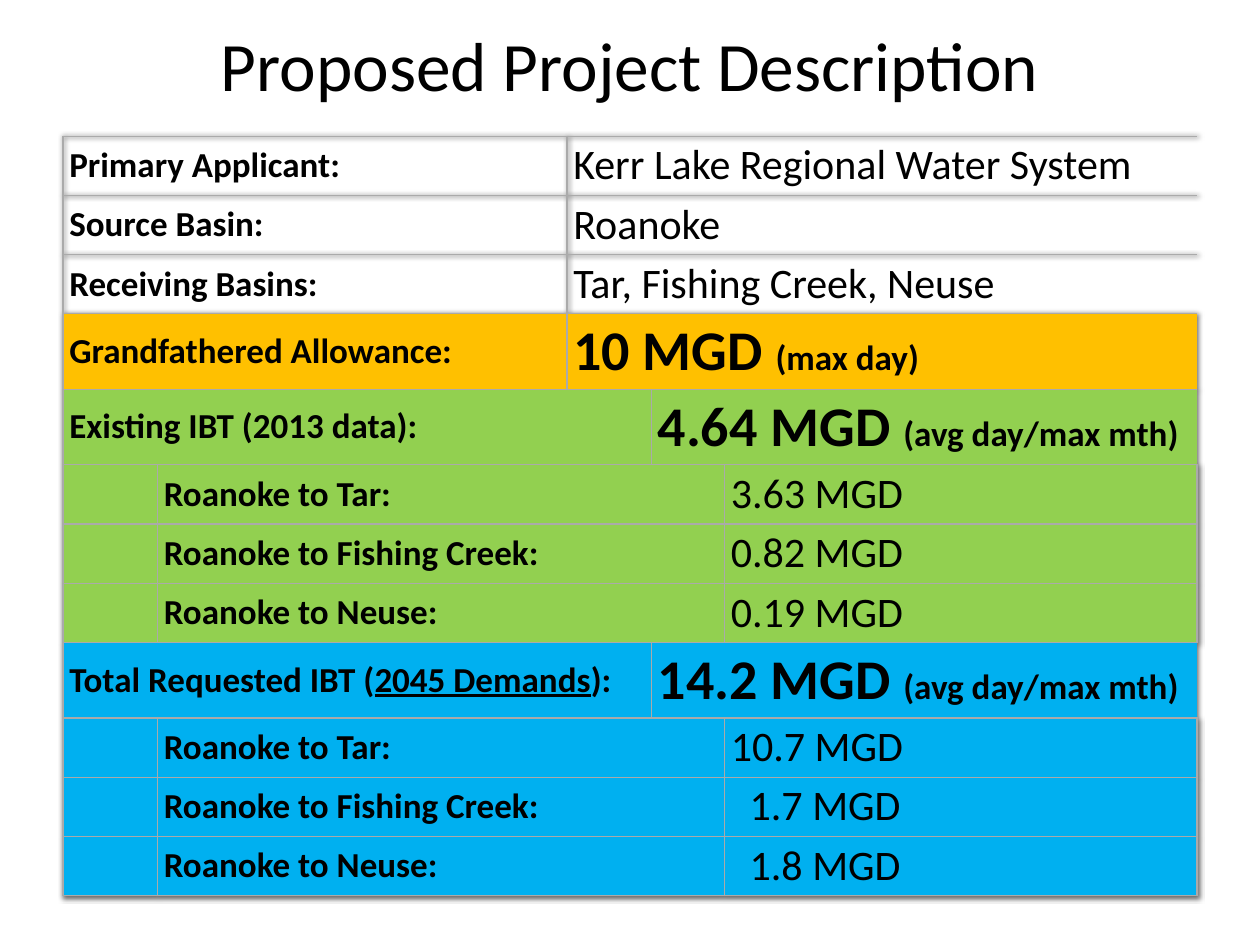
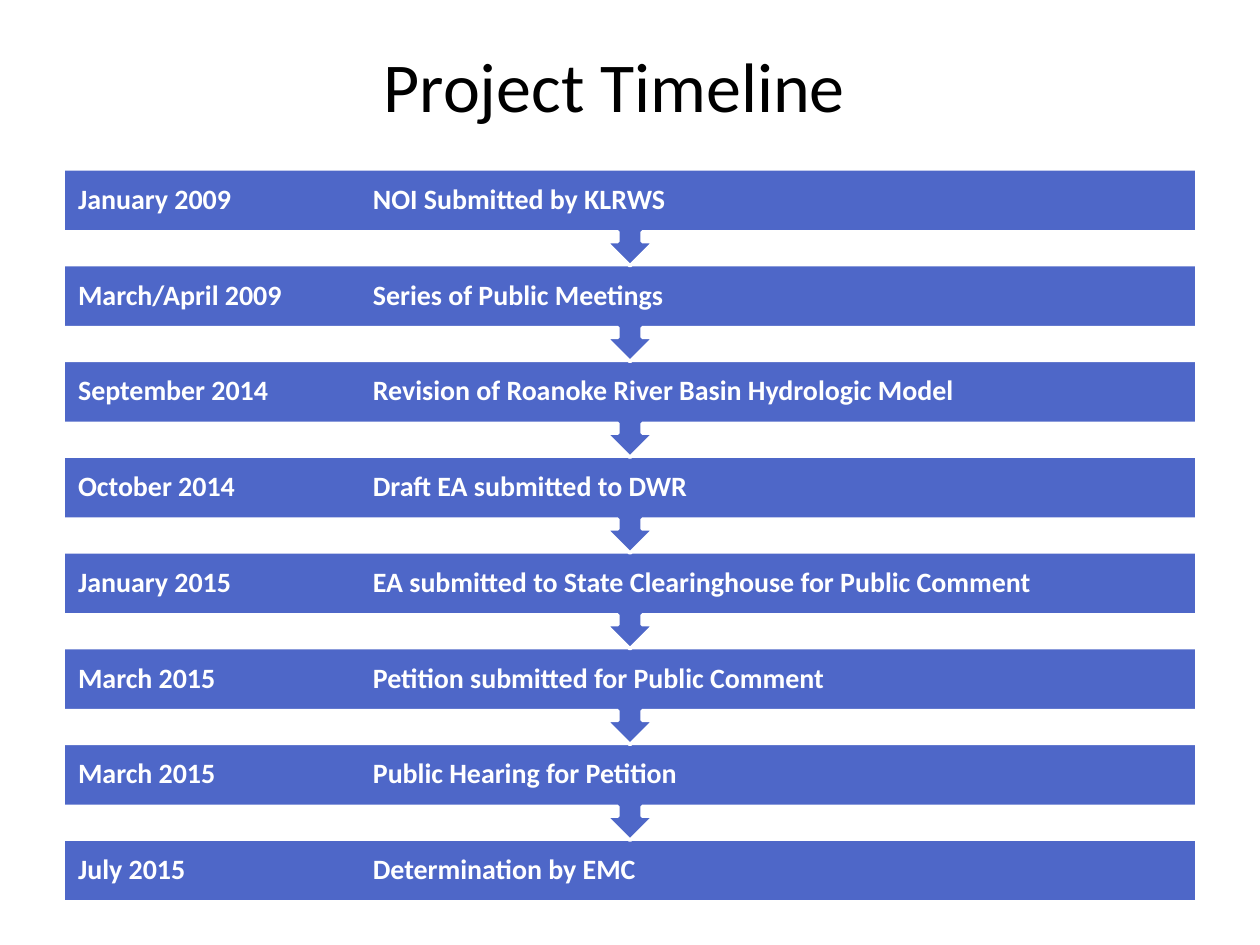
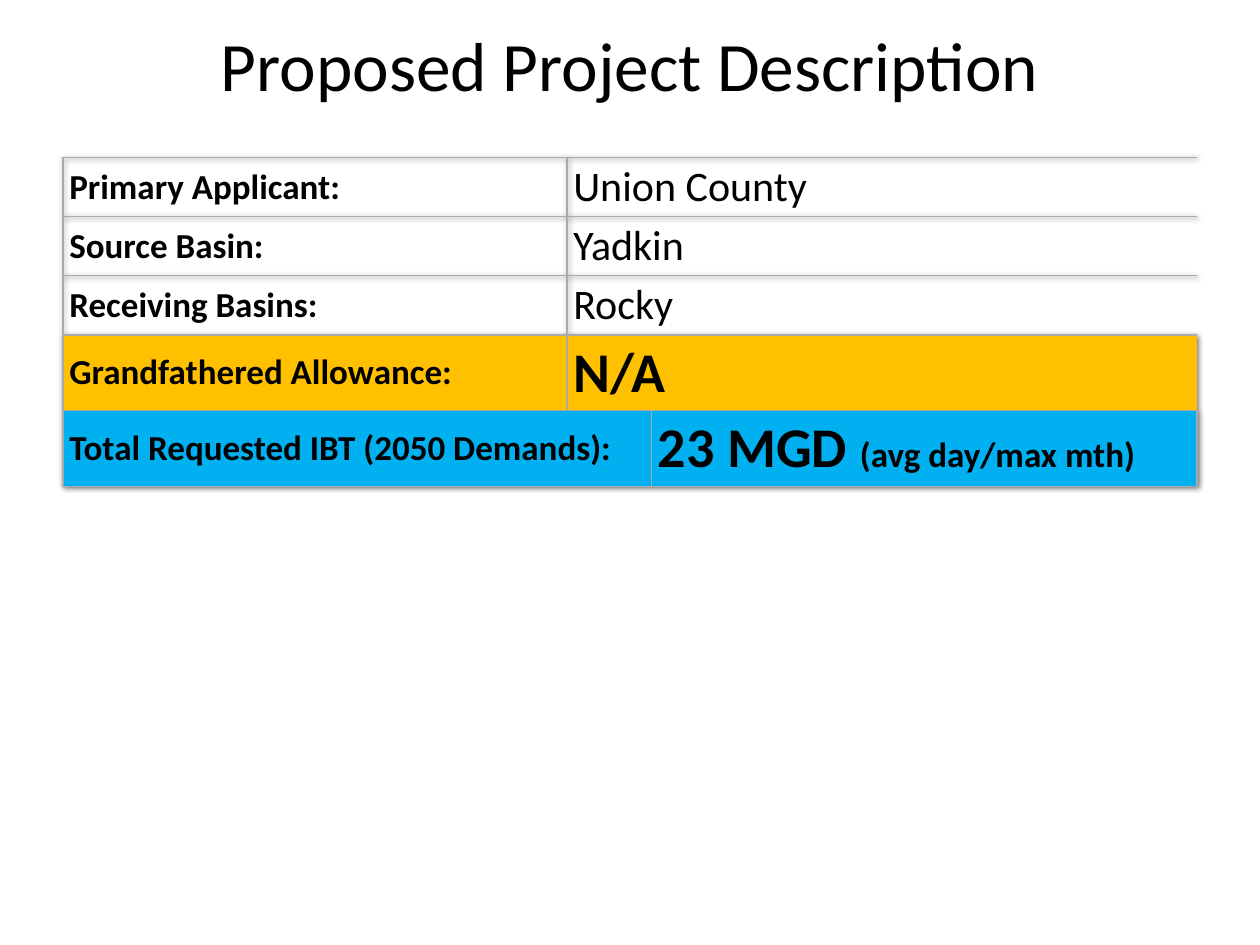
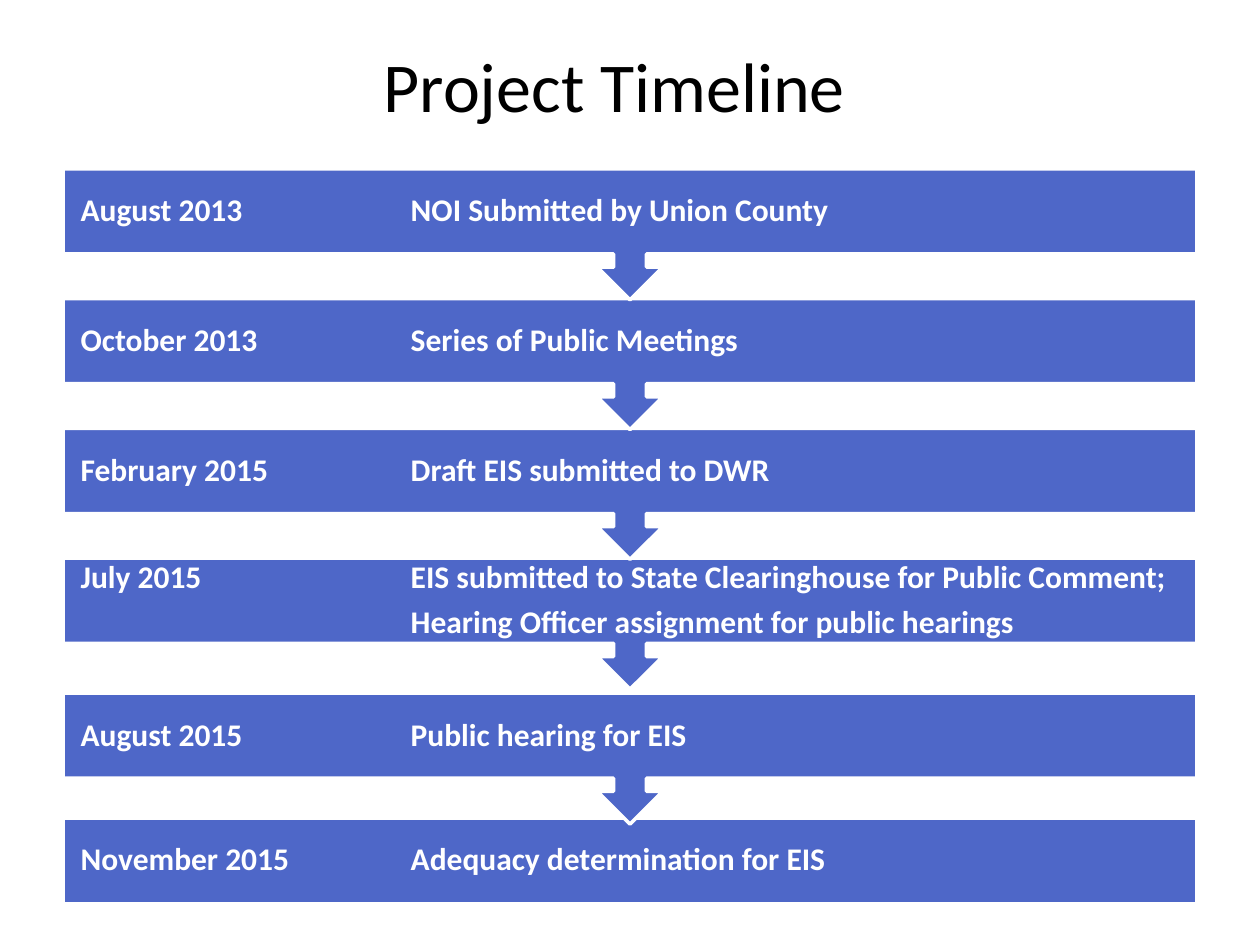
from lxml import etree
from pptx import Presentation
from pptx.dml.color import RGBColor
from pptx.enum.shapes import MSO_SHAPE
from pptx.enum.text import MSO_ANCHOR, PP_ALIGN
from pptx.oxml import parse_xml
from pptx.oxml.ns import nsdecls, qn
from pptx.util import Inches, Pt

FONT = "Calibri"
COLORS = {
    "black": "000000",
    "white": "FFFFFF",
    "grid": "AAAAAA",
    "grandfathered": "FFC000",
    "existing": "92D050",
    "requested": "00B0F0",
    "step": "4E67C8",
}
PLAIN_TABLE_STYLE = "{2D5ABB26-0587-4C30-8999-92F81FD0307C}"
RUN_STYLES = {
    "label": (20, True, False),
    "underlined": (20, True, True),
    "value": (24, False, False),
    "figure": (32, True, False),
}
LEFT, WIDTH = 0.5, 9
ROW_HEIGHT, FIGURE_ROW_HEIGHT = 0.47, 0.6
TIMELINE_TOP = 1.34
MONTHLY_BASIS = ("(avg day/max mth)", "label")


def color(name):
    return RGBColor.from_string(COLORS[name])


def format_font(font, size, color_name, bold=False):
    font.name = FONT
    font.size = Pt(size)
    font.bold = bold
    font.color.rgb = color(color_name)


def add_slide(presentation):
    return presentation.slides.add_slide(presentation.slide_layouts[6])


def add_text_box(slide, left, top, width, height, text, inset=None):
    text_frame = slide.shapes.add_textbox(
        Inches(left), Inches(top), Inches(width), Inches(height)
    ).text_frame
    text_frame.word_wrap = True
    text_frame.vertical_anchor = MSO_ANCHOR.MIDDLE
    if inset is not None:
        text_frame.margin_left = text_frame.margin_right = Inches(inset)
        text_frame.margin_top = text_frame.margin_bottom = Inches(inset)
    text_frame.text = text
    return text_frame


def add_title(slide, text, width, height, size):
    paragraph = add_text_box(slide, LEFT, 0.17, width, height, text).paragraphs[0]
    paragraph.alignment = PP_ALIGN.CENTER
    format_font(paragraph.runs[0].font, size, "black")


def set_borders(cell, borders):
    properties = cell._tc.get_or_add_tcPr()
    for position, (side, (color_name, points)) in enumerate(borders.items()):
        line = parse_xml(
            f'<a:{side} {nsdecls("a")} w="{Pt(points)}"><a:solidFill>'
            f'<a:srgbClr val="{COLORS[color_name]}"/></a:solidFill></a:{side}>'
        )
        properties.insert(position, line)


def style_table(table):
    table.first_row = table.horz_banding = False
    properties = table._tbl.tblPr
    style = properties.find(qn("a:tableStyleId"))
    style.text = PLAIN_TABLE_STYLE
    effects = etree.Element(qn("a:effectLst"))
    shadow = etree.SubElement(
        effects, qn("a:outerShdw"), blurRad="38100", dist="12700", dir="2700000"
    )
    shade = etree.SubElement(shadow, qn("a:srgbClr"), val=COLORS["black"])
    etree.SubElement(shade, qn("a:alpha"), val="60000")
    style.addprevious(effects)


def fill_cell(cell, runs, indent):
    cell.vertical_anchor = MSO_ANCHOR.MIDDLE
    cell.margin_left = Inches(0.05 + indent)
    cell.margin_right = Inches(0.05)
    cell.margin_top = cell.margin_bottom = Inches(0.03)
    paragraph = cell.text_frame.paragraphs[0]
    for text, style in runs:
        run = paragraph.add_run()
        run.text = text
        size, bold, underline = RUN_STYLES[style]
        format_font(run.font, size, "black", bold)
        if underline:
            run.font.underline = True


def add_description_table(slide, top, column_widths, rows):
    heights = [
        FIGURE_ROW_HEIGHT if row["texts"][-1][0][1] == "figure" else ROW_HEIGHT
        for row in rows
    ]
    table = slide.shapes.add_table(
        len(rows), len(column_widths),
        Inches(LEFT), Inches(top), Inches(WIDTH), Inches(sum(heights)),
    ).table
    style_table(table)
    for column, width in zip(table.columns, column_widths):
        column.width = Inches(width)
    for row_index, (row, height) in enumerate(zip(rows, heights)):
        table.rows[row_index].height = Inches(height)
        starts = row["starts"]
        ends = starts[1:] + (len(column_widths),)
        for start, end, runs in zip(starts, ends, row["texts"]):
            for column_index in range(start, end):
                cell = table.cell(row_index, column_index)
                if row["fill"]:
                    cell.fill.solid()
                    cell.fill.fore_color.rgb = color(row["fill"])
                else:
                    cell.fill.background()
                borders = {}
                if column_index == start:
                    borders["lnL"] = ("grid", 0.75)
                if column_index == end - 1:
                    dark = row["dark_edge"] and end == len(column_widths)
                    borders["lnR"] = ("black", 1) if dark else ("grid", 0.75)
                borders["lnT"] = borders["lnB"] = ("grid", 0.75)
                set_borders(cell, borders)
            origin = table.cell(row_index, start)
            if end - start > 1:
                origin.merge(table.cell(row_index, end - 1))
            fill_cell(origin, runs, row["indent"] if start == starts[-1] else 0)


def table_row(starts, texts, fill=None, dark_edge=False, indent=0):
    return dict(starts=starts, texts=texts, fill=fill, dark_edge=dark_edge, indent=indent)


def applicant_rows(starts, applicant, source, receiving, allowance):
    facts = [
        ("Primary Applicant:", applicant),
        ("Source Basin:", source),
        ("Receiving Basins:", receiving),
    ]
    rows = [
        table_row(starts, [[(label, "label")], [(value, "value")]], dark_edge=True)
        for label, value in facts
    ]
    allowance_texts = [[("Grandfathered Allowance:", "label")], allowance]
    return rows + [table_row(starts, allowance_texts, "grandfathered", True)]


def total_row(starts, label, figure, fill):
    return table_row(starts, [label, [(figure, "figure"), MONTHLY_BASIS]], fill)


def transfer_rows(fill, amounts):
    basins = ("Tar", "Fishing Creek", "Neuse")
    return [
        table_row(
            (0, 1, 4),
            [[], [(f"Roanoke to {basin}:", "label")], [(f"{amount} MGD", "value")]],
            fill,
            indent=indent,
        )
        for basin, (amount, indent) in zip(basins, amounts)
    ]


def add_step_shape(slide, kind, top, height, rotation=0):
    shape = slide.shapes.add_shape(
        kind, Inches(LEFT), Inches(top), Inches(WIDTH), Inches(height)
    )
    shape.rotation = rotation
    shape.shadow.inherit = False
    shape.fill.solid()
    shape.fill.fore_color.rgb = color("step")
    shape.line.color.rgb = color("white")
    shape.line.width = Pt(2)


def add_step_text(slide, top, height, lines, size, inset, tab):
    text_frame = add_text_box(slide, LEFT, top, WIDTH, height, "\n".join(lines), inset)
    for paragraph in text_frame.paragraphs:
        properties = paragraph._p.get_or_add_pPr()
        tabs = etree.SubElement(properties, qn("a:tabLst"))
        etree.SubElement(tabs, qn("a:tab"), pos=str(Inches(tab)), algn="l")
        paragraph.line_spacing = 0.9
        paragraph.space_after = Pt(size * 0.35)
        for run in paragraph.runs:
            format_font(run.font, size, "white", True)


def add_timeline(slide, steps, tops, bar_height, callout_height, size, inset, tab):
    add_title(slide, "Project Timeline", 8.75, 1, 40)
    for index in reversed(range(len(steps))):
        date, *events = steps[index]
        if index == len(steps) - 1:
            add_step_shape(slide, MSO_SHAPE.RECTANGLE, tops[index], bar_height)
        else:
            add_step_shape(
                slide, MSO_SHAPE.UP_ARROW_CALLOUT, tops[index], callout_height, 180
            )
        lines = [f"{date}\t{events[0]}"] + [f"\t{event}" for event in events[1:]]
        add_step_text(slide, tops[index], bar_height, lines, size, inset, tab)


def add_description(slide, top, column_widths, rows):
    add_title(slide, "Proposed Project Description", WIDTH, 0.67, 39.6)
    add_description_table(slide, top, column_widths, rows)


def build_kerr_lake_description(slide):
    rows = applicant_rows(
        (0, 2), "Kerr Lake Regional Water System", "Roanoke",
        "Tar, Fishing Creek, Neuse", [("10 MGD ", "figure"), ("(max day)", "label")],
    )
    existing_label = [("Existing IBT (2013 data):", "label")]
    rows.append(total_row((0, 3), existing_label, "4.64 MGD ", "existing"))
    rows += transfer_rows("existing", [("3.63", 0), ("0.82", 0), ("0.19", 0)])
    requested_label = [
        ("Total Requested IBT (", "label"),
        ("2045 Demands", "underlined"),
        ("):", "label"),
    ]
    rows.append(total_row((0, 3), requested_label, "14.2 MGD ", "requested"))
    rows += transfer_rows("requested", [("10.7", 0), ("1.7", 0.15), ("1.8", 0.15)])
    add_description(slide, 1.08, (0.75, 3.25, 0.67, 0.58, 3.75), rows)


def build_kerr_lake_timeline(slide):
    steps = [
        ("January 2009", "NOI Submitted by KLRWS"),
        ("March/April 2009", "Series of Public Meetings"),
        ("September 2014", "Revision of Roanoke River Basin Hydrologic Model"),
        ("October 2014", "Draft EA submitted to DWR"),
        ("January 2015", "EA submitted to State Clearinghouse for Public Comment"),
        ("March 2015", "Petition submitted for Public Comment"),
        ("March 2015", "Public Hearing for Petition"),
        ("July 2015", "Determination by EMC"),
    ]
    tops = [TIMELINE_TOP + 0.76 * index for index in range(len(steps))]
    add_timeline(slide, steps, tops, 0.5, 0.77, 16, 0.12, 2.34)


def build_union_county_description(slide):
    rows = applicant_rows(
        (0, 1), "Union County", "Yadkin", "Rocky", [("N/A", "figure")]
    )
    requested_label = [("Total Requested IBT (2050 Demands):", "label")]
    rows.append(total_row((0, 2), requested_label, "23 MGD ", "requested"))
    add_description(slide, 1.25, (4, 0.67, 4.33), rows)


def build_union_county_timeline(slide):
    steps = [
        ("August 2013", "NOI Submitted by Union County"),
        ("October 2013", "Series of Public Meetings"),
        ("February 2015", "Draft EIS submitted to DWR"),
        (
            "July 2015",
            "EIS submitted to State Clearinghouse for Public Comment;",
            "Hearing Officer assignment for public hearings",
        ),
        ("August 2015", "Public hearing for EIS"),
        ("November 2015", "Adequacy determination for EIS"),
    ]
    tops = [TIMELINE_TOP + 1.03 * index for index in range(4)] + [5.5, 6.49]
    add_timeline(slide, steps, tops, 0.68, 1.04, 18, 0.14, 2.62)


def main():
    presentation = Presentation()
    presentation.slide_width = Inches(10)
    presentation.slide_height = Inches(7.5)
    for build in (
        build_kerr_lake_description,
        build_kerr_lake_timeline,
        build_union_county_description,
        build_union_county_timeline,
    ):
        build(add_slide(presentation))
    presentation.save("out.pptx")


if __name__ == "__main__":
    main()
